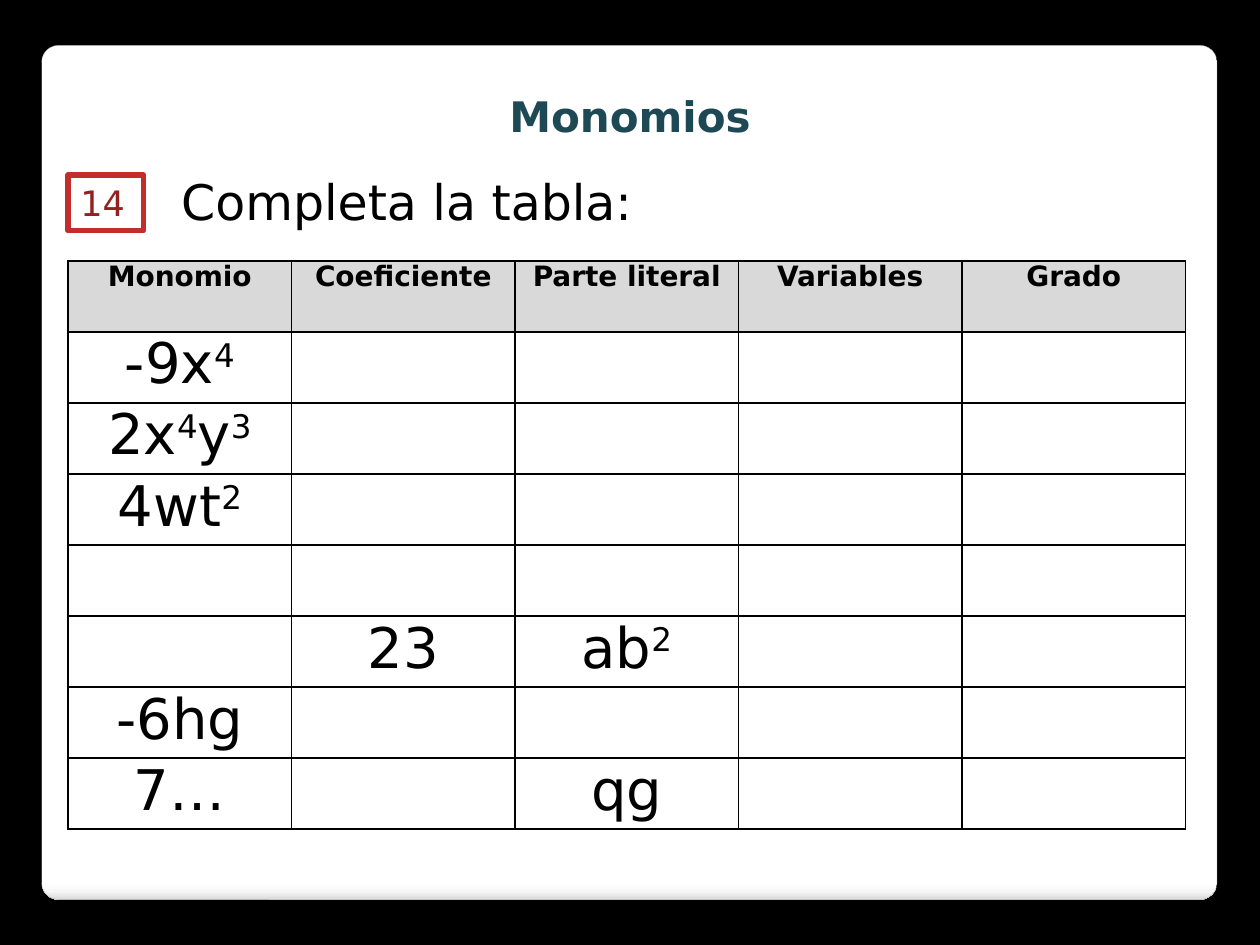
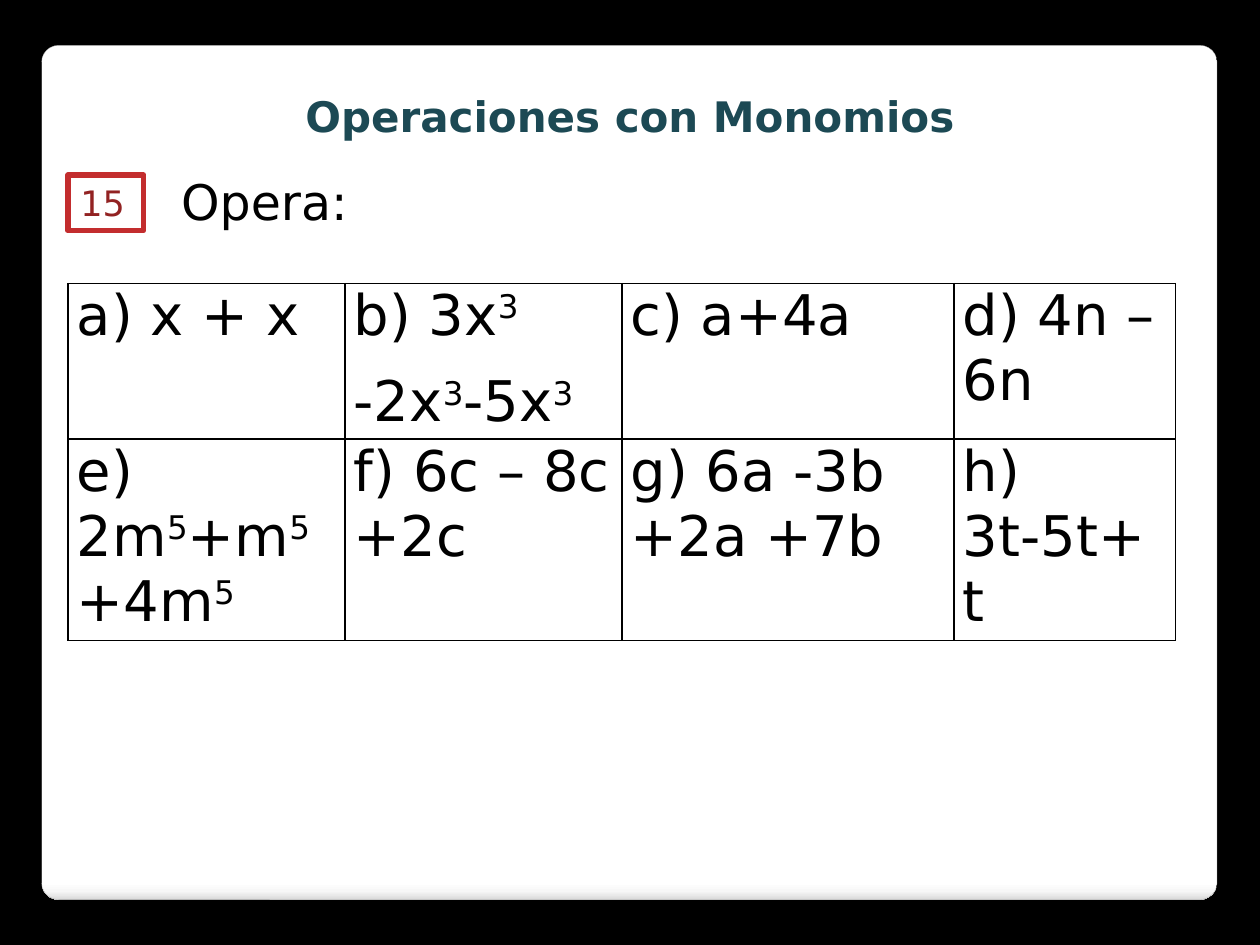
from pptx import Presentation
from pptx.dml.color import RGBColor
from pptx.enum.shapes import MSO_SHAPE as Shape
from pptx.enum.text import MSO_AUTO_SIZE as Auto, PP_ALIGN as Align
from pptx.oxml import parse_xml
from pptx.oxml.ns import nsdecls, qn
from pptx.util import Inches, Pt

FONT = "DejaVu Sans"
BLACK, WHITE, GREY = "000000", "FFFFFF", "D9D9D9"
TEAL, RED, WINE, EDGE = "1C4954", "C32D2E", "922222", "A4A4A4"
FADE = [(0, WHITE), (98, WHITE), (99, "F7F7F7"), (100, "DADADA")]

HEADS = ["Monomio", "Coeficiente", "Parte literal", "Variables", "Grado"]
TERMS = [
    ["-9x^4"],
    ["2x^4y^3"],
    ["4wt^2"],
    [],
    ["", "23", "ab^2"],
    ["-6hg"],
    ["7…", "", "qg"],
]
SUMS = [
    ["a) x + x", "b) 3x^3\n-2x^3-5x^3", "c) a+4a", "d) 4n – 6n"],
    ["e) 2m^5+m^5+4m^5", "f) 6c – 8c +2c", "g) 6a -3b +2a +7b", "h) 3t-5t+t"],
]


def color(code):
    return RGBColor.from_string(code)


def grid(*cells):
    """Turn counts of grid units, ten to the inch, into lengths."""
    return [Inches(n / 10) for n in cells]


def node(tag, inner="", attrs=""):
    return parse_xml(f"<a:{tag} {nsdecls('a')} {attrs}>{inner}</a:{tag}>")


def tint(code, inner=""):
    return f'<a:srgbClr val="{code}">{inner}</a:srgbClr>'


class Deck:
    def __init__(self):
        self.prs = Presentation()
        self.prs.slide_width, self.prs.slide_height = grid(100, 75)
        back = self.prs.slide_master.background.fill
        back.solid()
        back.fore_color.rgb = color(BLACK)
        self.slide = None

    def start(self, title, number, task):
        """Add a slide with its panel, title, number and task."""
        self.slide = self.prs.slides.add_slide(self.prs.slide_layouts[6])
        self.panel()
        self.label(title, (3.9, 6.7, 92.2, 5), 24, TEAL, bold=True, align=Align.CENTER)
        self.badge(number)
        self.label(task, (13.4, 13.1, 82.7, 5.7), 28)

    def panel(self):
        box = self.slide.shapes.add_shape(
            Shape.ROUNDED_RECTANGLE, *grid(3.3, 3.6, 93.3, 67.8))
        box.adjustments[0] = 0.02
        box.fill.gradient()
        box.fill.gradient_angle = 270
        props = box._element.spPr
        stops = props.find(".//" + qn("a:gsLst"))
        del stops[:]
        for share, code in FADE:
            stops.append(node("gs", tint(code), f'pos="{share * 1000}"'))
        box.line.color.rgb = color(EDGE)
        box.line.width = Pt(0.16)
        box.shadow.inherit = False
        props.find(qn("a:effectLst")).append(node(
            "outerShdw", tint(BLACK, '<a:alpha val="25000"/>'),
            f'blurRad="{Pt(6)}" dist="{Pt(4)}" dir="5400000" rotWithShape="0"'))

    def put(self, frame, text, size, code=BLACK, bold=False, align=Align.LEFT, gap=0):
        """Fill a frame line by line; ^ raises the character after it."""
        for i, line in enumerate(text.split("\n")):
            par = frame.add_paragraph() if i else frame.paragraphs[0]
            par.alignment = align
            par.space_before = par.space_after = Pt(gap)
            font = par.font
            font.name, font.size, font.bold = FONT, Pt(size), bold
            font.color.rgb = color(code)
            first, *rest = line.split("^")
            par.add_run().text = first
            for part in rest:
                power = par.add_run()
                power.text = part[0]
                power.font._element.set("baseline", "30000")
                if part[1:]:
                    par.add_run().text = part[1:]

    def label(self, text, place, size, code=BLACK, **style):
        frame = self.slide.shapes.add_textbox(*grid(*place)).text_frame
        frame.word_wrap = True
        frame.auto_size = Auto.SHAPE_TO_FIT_TEXT
        self.put(frame, text, size, code, **style)

    def badge(self, number):
        box = self.slide.shapes.add_shape(
            Shape.RECTANGLE, *grid(5.4, 13.9, 6, 4.4))
        box.shadow.inherit = False
        box.fill.solid()
        box.fill.fore_color.rgb = color(WHITE)
        box.line.color.rgb = color(RED)
        box.line.width = Pt(3.35)
        self.put(box.text_frame, str(number), 20, WINE)

    def table(self, top, cols, rows):
        """Draw an empty table with the given column widths and row heights."""
        place = grid(5.4, top, sum(cols), sum(rows))
        table = self.slide.shapes.add_table(len(rows), len(cols), *place).table
        table.first_row = table.horz_banding = False
        for col, width in zip(table.columns, grid(*cols)):
            col.width = width
        for row, height in zip(table.rows, grid(*rows)):
            row.height = height
        for cell in table.iter_cells():
            self.dress(cell)
        return table

    def dress(self, cell, code=WHITE):
        """Give a cell its fill and borders."""
        cell.fill.solid()
        cell.fill.fore_color.rgb = color(code)
        props = cell._tc.get_or_add_tcPr()
        for i, side in enumerate("LRTB"):
            fill = f"<a:solidFill>{tint(BLACK)}</a:solidFill>"
            props.insert(i, node("ln" + side, fill, f'w="{Pt(1)}"'))

    def enter(self, table, row, texts, size, **style):
        """Set texts into a table row from the left, skipping empty ones."""
        for col, text in enumerate(texts):
            if text:
                cell = table.cell(row, col)
                cell.margin_left = cell.margin_right = Inches(0.07)
                cell.margin_top = cell.margin_bottom = 0
                self.put(cell.text_frame, text, size, **style)


def main():
    deck = Deck()

    deck.start("Monomios", 14, "Completa la tabla:")
    table = deck.table(20.7, [17.74] * 5, [5.64] * 8)
    deck.enter(table, 0, HEADS, 16, bold=True, align=Align.CENTER)
    for col in range(len(HEADS)):
        table.cell(0, col).fill.fore_color.rgb = color(GREY)
    for row, terms in enumerate(TERMS, 1):
        deck.enter(table, row, terms, 32, align=Align.CENTER)

    deck.start("Operaciones con Monomios", 15, "Opera:")
    table = deck.table(22.5, [21.98, 21.98, 26.36, 17.58], [12.3, 16])
    for row, sums in enumerate(SUMS):
        deck.enter(table, row, sums, 32, gap=6)

    deck.prs.save("out.pptx")


if __name__ == "__main__":
    main()
